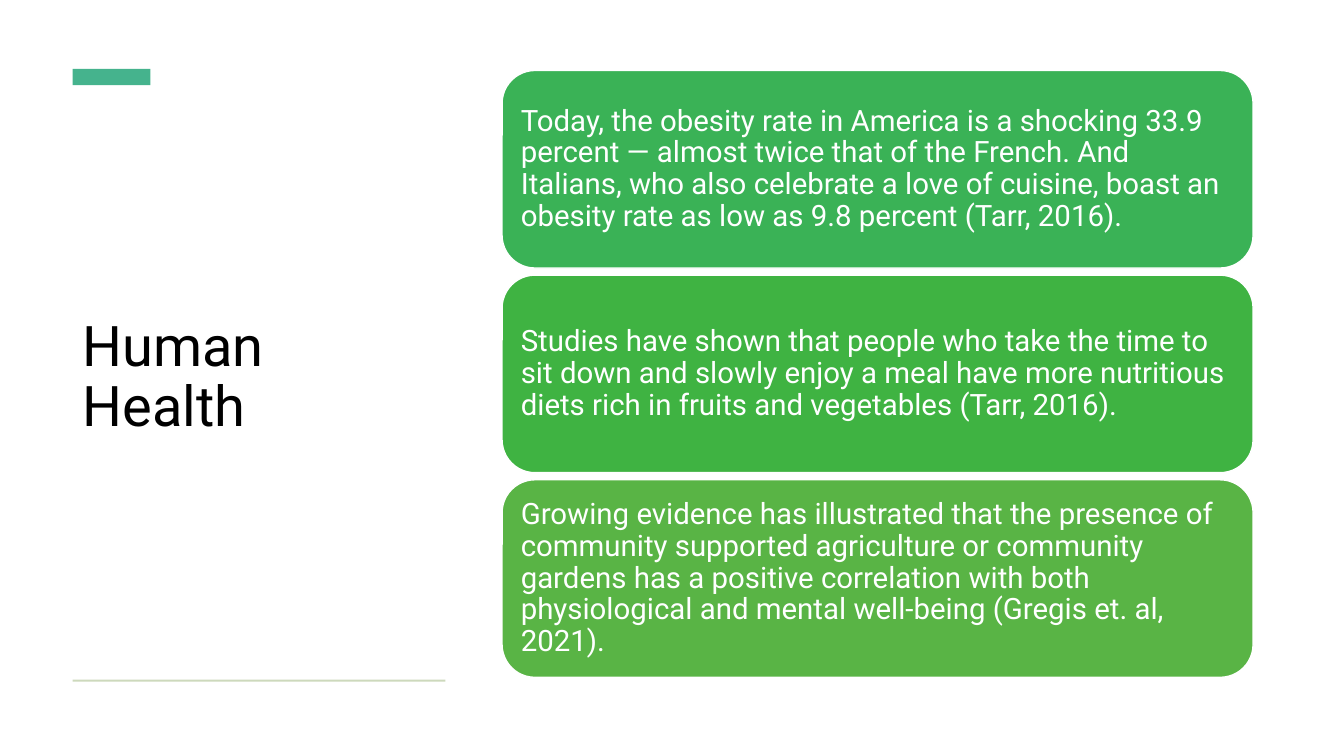
import dataclasses

import pptx
import pptx.dml.color
import pptx.enum.shapes
import pptx.enum.text
import pptx.util

SHAPES = pptx.enum.shapes.MSO_SHAPE
SLIDE_WIDTH = pptx.util.Inches(13.33)
SLIDE_HEIGHT = pptx.util.Inches(7.5)

# Lengths are percentages of the slide's width or height.
SIDEBAR_LEFT, SIDEBAR_WIDTH = 5.4, 27.75
CARD_LEFT, CARD_WIDTH = 37.36, 55.88
CARD_TOP, CARD_HEIGHT, CARD_GAP = 9.33, 26.13, 0.94


@dataclasses.dataclass(frozen=True)
class Theme:
    font: str = "Roboto"
    title_size: int = 40
    card_size: int = 21
    background: str = "FFFFFF"
    title: str = "000000"
    card_text: str = "FFFFFF"
    card_outline: str = "FFFFFF"
    accent: str = "45B38D"
    rule: str = "CDD9BC"
    cards: tuple = ("3AB256", "3FB342", "59B445")


THEME = Theme()

FINDINGS = (
    "Today, the obesity rate in America is a shocking 33.9 percent — almost "
    "twice that of the French. And Italians, who also celebrate a love of "
    "cuisine, boast an obesity rate as low as 9.8 percent (Tarr, 2016).",
    "Studies have shown that people who take the time to sit down and slowly "
    "enjoy a meal have more nutritious diets rich in fruits and vegetables "
    "(Tarr, 2016).",
    "Growing evidence has illustrated that the presence of community supported "
    "agriculture or community gardens has a positive correlation with both "
    "physiological and mental well-being (Gregis et. al, 2021).",
)


def rgb(code):
    return pptx.dml.color.RGBColor.from_string(code)


def region(left, top, width, height):
    """Turn percentages of the slide into left, top, width and height."""
    return (
        int(SLIDE_WIDTH * left / 100),
        int(SLIDE_HEIGHT * top / 100),
        int(SLIDE_WIDTH * width / 100),
        int(SLIDE_HEIGHT * height / 100),
    )


def write_text(shape, text, *, size, color, margin_left=0.1, margin_right=0.1):
    frame = shape.text_frame
    frame.text = text
    frame.word_wrap = True
    frame.auto_size = pptx.enum.text.MSO_AUTO_SIZE.NONE
    frame.vertical_anchor = pptx.enum.text.MSO_ANCHOR.MIDDLE
    frame.margin_left = pptx.util.Inches(margin_left)
    frame.margin_right = pptx.util.Inches(margin_right)
    paragraph = frame.paragraphs[0]
    paragraph.alignment = pptx.enum.text.PP_ALIGN.LEFT
    paragraph.line_spacing = 0.9
    font = paragraph.runs[0].font
    font.name = THEME.font
    font.size = pptx.util.Pt(size)
    font.color.rgb = rgb(color)


def add_block(slide, kind, place, fill, outline=None):
    shape = slide.shapes.add_shape(kind, *region(*place))
    shape.shadow.inherit = False
    shape.fill.solid()
    shape.fill.fore_color.rgb = rgb(fill)
    if outline:
        shape.line.color.rgb = rgb(outline)
        shape.line.width = pptx.util.Pt(1)
    else:
        shape.line.fill.background()
    return shape


def add_title(slide, text):
    title = slide.shapes.title
    place = region(SIDEBAR_LEFT, 14, SIDEBAR_WIDTH, 72.13)
    title.left, title.top, title.width, title.height = place
    write_text(title, text, size=THEME.title_size, color=THEME.title,
               margin_right=0.2)


def add_card(slide, row, text):
    """Add a card; its round corners inset the text by a further 0.1 inch."""
    top = CARD_TOP + row * (CARD_HEIGHT + CARD_GAP)
    card = add_block(slide, SHAPES.ROUNDED_RECTANGLE,
                     (CARD_LEFT, top, CARD_WIDTH, CARD_HEIGHT),
                     THEME.cards[row], THEME.card_outline)
    write_text(card, text, size=THEME.card_size, color=THEME.card_text,
               margin_left=0.09, margin_right=0.09)


def main():
    presentation = pptx.Presentation()
    presentation.slide_width = SLIDE_WIDTH
    presentation.slide_height = SLIDE_HEIGHT
    title_only = presentation.slide_layouts.get_by_name("Title Only")
    slide = presentation.slides.add_slide(title_only)
    slide.background.fill.solid()
    slide.background.fill.fore_color.rgb = rgb(THEME.background)

    add_title(slide, "Human Health")
    add_block(slide, SHAPES.RECTANGLE, (SIDEBAR_LEFT, 9.13, 5.8, 2.13),
              THEME.accent)
    add_block(slide, SHAPES.RECTANGLE,
              (SIDEBAR_LEFT, 89.9, SIDEBAR_WIDTH, 0.27), THEME.rule)
    for row, finding in enumerate(FINDINGS):
        add_card(slide, row, finding)

    presentation.save("out.pptx")


if __name__ == "__main__":
    main()
